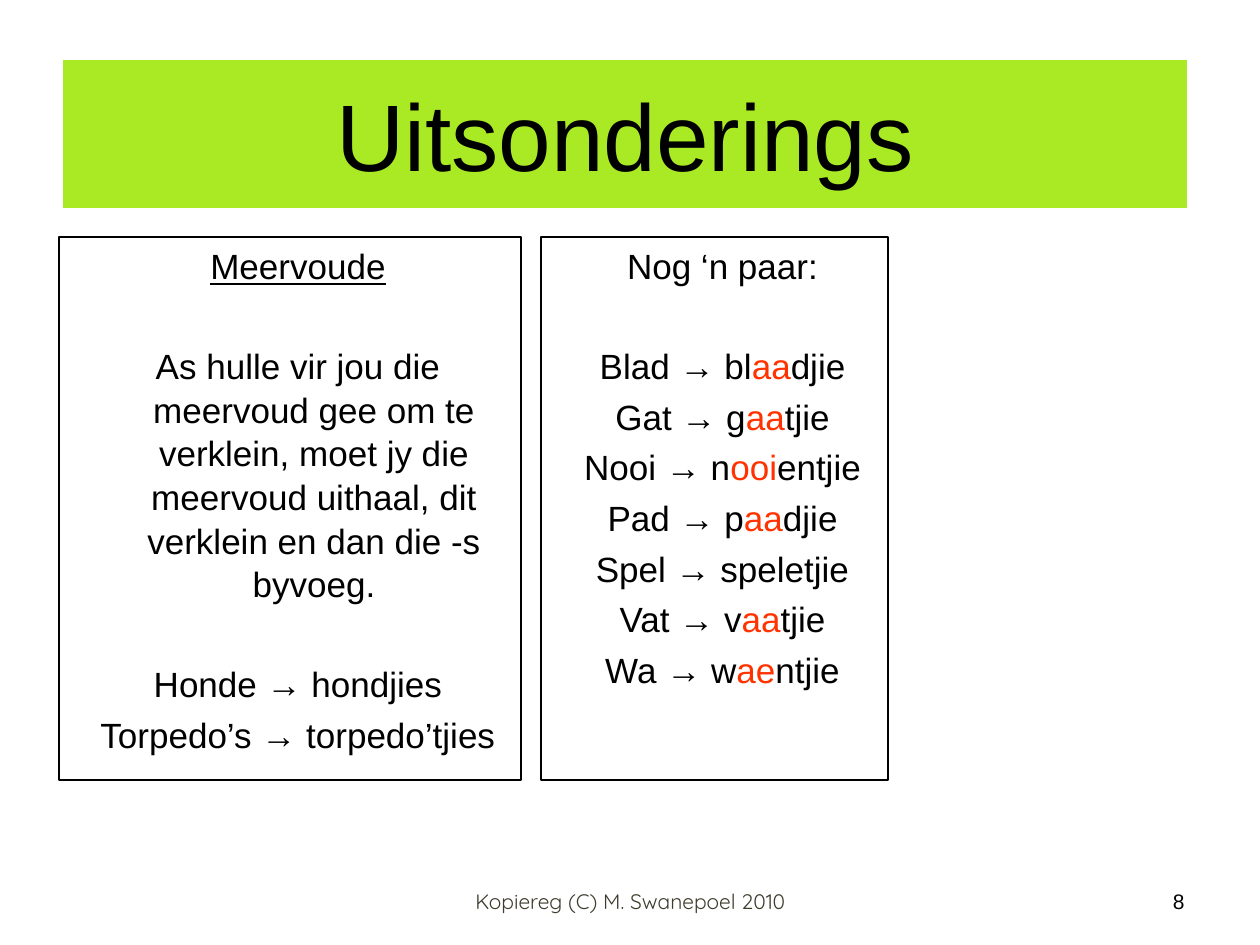
from dataclasses import dataclass

from pptx import Presentation
from pptx.dml.color import RGBColor
from pptx.enum.shapes import MSO_SHAPE as Preset
from pptx.enum.text import MSO_ANCHOR as Anchor, MSO_AUTO_SIZE as AutoSize, PP_ALIGN as Align
from pptx.slide import Slide
from pptx.util import Emu, Pt

EMU_PER_PX = 914400 / 126


@dataclass(frozen=True)
class Theme:
    ink: RGBColor = RGBColor(0x00, 0x00, 0x00)
    paper: RGBColor = RGBColor(0xFF, 0xFF, 0xFF)
    banner: RGBColor = RGBColor(0xAA, 0xEA, 0x25)
    accent: RGBColor = RGBColor(0xFF, 0x33, 0x00)
    footer: RGBColor = RGBColor(0x3E, 0x3D, 0x2D)
    font: str = "Arial"
    footer_font: str = "Quicksand"
    title_size: int = 54
    body_size: int = 20
    footer_size: int = 12


@dataclass(frozen=True)
class Box:
    left: int
    top: int
    width: int
    height: int

    def emu(self) -> tuple[Emu, ...]:
        return tuple(px(v) for v in (self.left, self.top, self.width, self.height))


@dataclass(frozen=True)
class Line:
    start: str
    accent: str = ""
    end: str = ""
    underline: bool = False
    gap_above: bool = False


@dataclass(frozen=True)
class Panel:
    box: Box
    lines: tuple[Line, ...]


@dataclass(frozen=True)
class Label:
    box: Box
    text: str
    align: Align
    font: str
    color: RGBColor


THEME = Theme()
TITLE_BOX = Box(58, 55, 1134, 158)
PANELS = (
    Panel(Box(59, 237, 462, 543), (
        Line("Meervoude", underline=True),
        Line("As hulle vir jou die meervoud gee om te verklein, moet jy die "
             "meervoud uithaal, dit verklein en dan die -s byvoeg.", gap_above=True),
        Line("Honde → hondjies", gap_above=True),
        Line("Torpedo’s → torpedo’tjies"),
    )),
    Panel(Box(541, 237, 347, 543), (
        Line("Nog ‘n paar:"),
        Line("Blad → bl", "aa", "djie", gap_above=True),
        Line("Gat → g", "aa", "tjie"),
        Line("Nooi → n", "ooi", "entjie"),
        Line("Pad → p", "aa", "djie"),
        Line("Spel → speletjie"),
        Line("Vat → v", "aa", "tjie"),
        Line("Wa → w", "ae", "ntjie"),
    )),
)
LABELS = (
    Label(Box(903, 876, 294, 50), "8", Align.RIGHT, THEME.font, THEME.ink),
    Label(Box(431, 876, 399, 50), "Kopiereg (C) M. Swanepoel 2010", Align.CENTER,
          THEME.footer_font, THEME.footer),
)


def px(value: int) -> Emu:
    return Emu(round(value * EMU_PER_PX))


def style_font(font, name: str, size: int, color: RGBColor) -> None:
    font.name = name
    font.size = Pt(size)
    font.color.rgb = color


def draw_title(slide: Slide, text: str) -> None:
    title = slide.shapes.title
    title.left, title.top, title.width, title.height = TITLE_BOX.emu()
    title.fill.solid()
    title.fill.fore_color.rgb = THEME.banner
    title.line.color.rgb = THEME.paper
    title.line.width = Pt(6)
    frame = title.text_frame
    frame.text = text
    frame.auto_size = AutoSize.NONE
    frame.vertical_anchor = Anchor.MIDDLE
    paragraph = frame.paragraphs[0]
    paragraph.alignment = Align.CENTER
    style_font(paragraph.runs[0].font, THEME.font, THEME.title_size, THEME.ink)


def write_line(paragraph, line: Line) -> None:
    paragraph.alignment = Align.CENTER
    paragraph.line_spacing = 1.04
    paragraph.space_before = Pt(32 if line.gap_above else 4)
    properties = paragraph._p.get_or_add_pPr()
    properties.set("marL", str(px(48)))
    properties.set("indent", str(px(-32)))
    parts = ((line.start, THEME.ink), (line.accent, THEME.accent), (line.end, THEME.ink))
    for text, color in parts:
        if text:
            run = paragraph.add_run()
            run.text = text
            style_font(run.font, THEME.font, THEME.body_size, color)
            run.font.underline = line.underline


def draw_panel(slide: Slide, panel: Panel) -> None:
    shape = slide.shapes.add_shape(Preset.RECTANGLE, *panel.box.emu())
    shape.shadow.inherit = False
    shape.fill.background()
    shape.line.color.rgb = THEME.ink
    shape.line.width = Pt(0.75)
    frame = shape.text_frame
    frame.word_wrap = True
    frame.vertical_anchor = Anchor.TOP
    for index, line in enumerate(panel.lines):
        paragraph = frame.add_paragraph() if index else frame.paragraphs[0]
        write_line(paragraph, line)


def draw_label(slide: Slide, label: Label) -> None:
    frame = slide.shapes.add_textbox(*label.box.emu()).text_frame
    frame.word_wrap = True
    frame.vertical_anchor = Anchor.MIDDLE
    frame.text = label.text
    paragraph = frame.paragraphs[0]
    paragraph.alignment = label.align
    style_font(paragraph.runs[0].font, label.font, THEME.footer_size, label.color)


def main() -> None:
    presentation = Presentation()
    presentation.slide_width = px(1260)
    presentation.slide_height = px(945)
    slide = presentation.slides.add_slide(presentation.slide_layouts[5])
    draw_title(slide, "Uitsonderings")
    for panel in PANELS:
        draw_panel(slide, panel)
    for label in LABELS:
        draw_label(slide, label)
    presentation.save("out.pptx")


if __name__ == "__main__":
    main()
